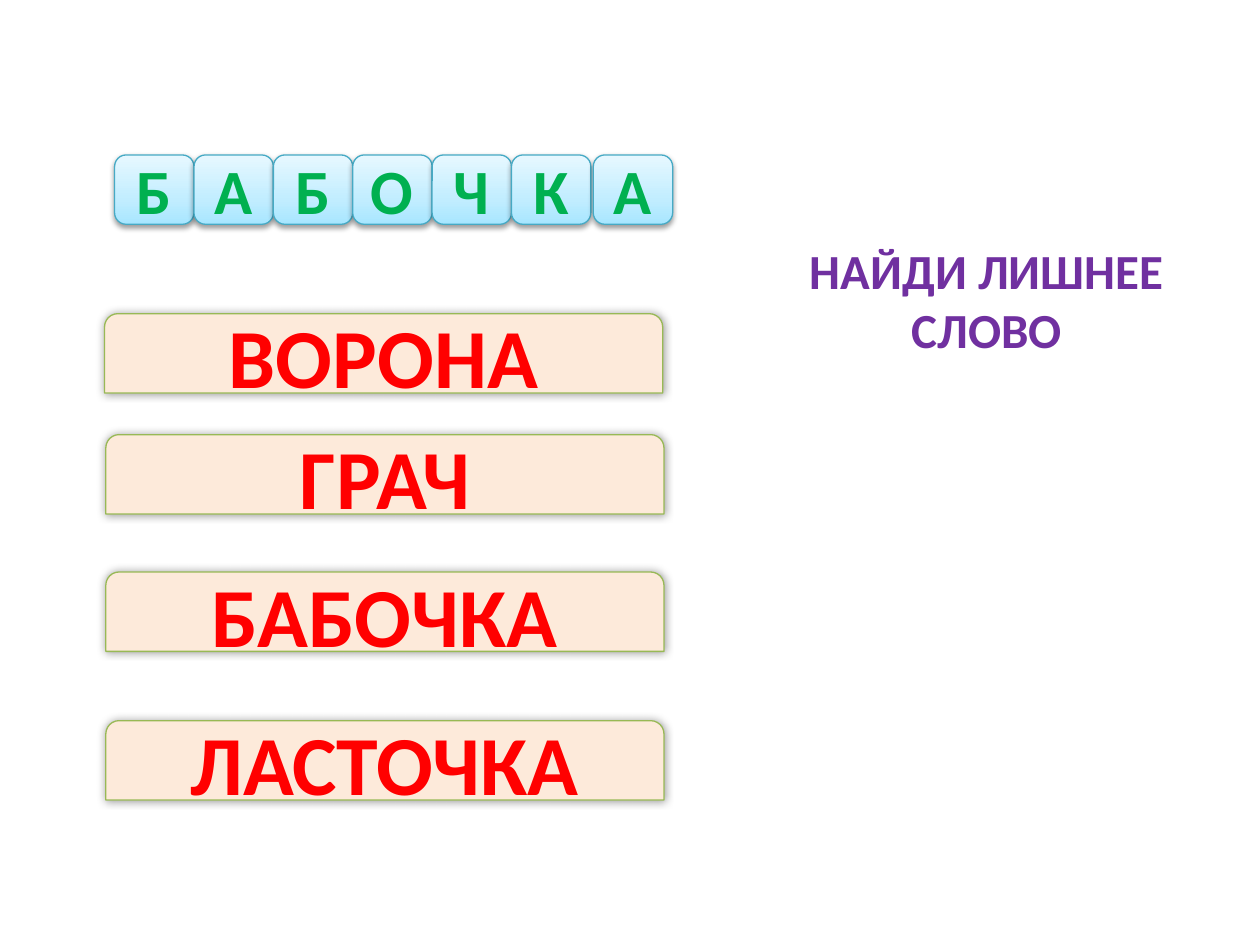
from copy import deepcopy
from dataclasses import dataclass

from lxml.etree import SubElement
from pptx import Presentation
from pptx.dml.color import RGBColor
from pptx.enum.shapes import MSO_SHAPE as Preset
from pptx.enum.text import MSO_ANCHOR as Anchor, MSO_AUTO_SIZE as AutoSize, PP_ALIGN as Align
from pptx.oxml.ns import qn
from pptx.util import Inches, Pt

# The slide is a grid of 100 columns and 75 rows of square cells.
COLUMNS, ROWS = 100, 75
CELL = Inches(0.1)

FONT = "Calibri"
RED = RGBColor(0xFF, 0x00, 0x00)
GREEN = RGBColor(0x00, 0xB0, 0x50)
PURPLE = RGBColor(0x70, 0x30, 0xA0)
PEACH = RGBColor(0xFD, 0xEA, 0xDA)
OLIVE = RGBColor(0x98, 0xB9, 0x55)
TEAL = RGBColor(0x46, 0xAA, 0xC5)
SKY = RGBColor(0xA7, 0xE6, 0xFF)
SKY_MIDDLE = RGBColor(0xC1, 0xED, 0xFF)
SKY_LIGHT = RGBColor(0xE7, 0xF8, 0xFF)


@dataclass(frozen=True)
class Area:
    left: float
    top: float
    width: float
    height: float

    def lengths(self) -> list[int]:
        return [round(cells * CELL) for cells in (self.left, self.top, self.width, self.height)]


@dataclass(frozen=True)
class Shadow:
    opacity: int
    blur: float
    distance: float
    angle: int


@dataclass(frozen=True)
class Letter:
    text: str
    position: float
    width: float

    def tile_area(self) -> Area:
        return Area(9.1 + 6.3 * self.position, 12.3, 6.3, 5.5)

    def text_area(self) -> Area:
        tile = self.tile_area()
        return Area(tile.left + (tile.width - self.width) / 2, 11.5, self.width, 7.1)


@dataclass(frozen=True)
class Plate:
    word: str
    left: float
    top: float


LETTERS = [
    Letter("Б", 0, 4.8),
    Letter("А", 1, 5.1),
    Letter("Б", 2, 4.8),
    Letter("О", 3, 5.4),
    Letter("Ч", 4, 4.9),
    Letter("К", 5, 4.8),
    Letter("А", 6.03, 5.1),
]
PLATES = [
    Plate("ВОРОНА", 8.3, 24.9),
    Plate("ГРАЧ", 8.4, 34.5),
    Plate("БАБОЧКА", 8.4, 45.4),
    Plate("ЛАСТОЧКА", 8.4, 57.2),
]
TILE_SHADOW = Shadow(opacity=38, blur=3.1, distance=1.6, angle=90)
PLATE_SHADOW = Shadow(opacity=40, blur=5, distance=0, angle=0)


def write_text(shape, text: str, *, size: int, color: RGBColor, align=Align.CENTER,
               anchor=Anchor.TOP, wrap: bool = True) -> None:
    frame = shape.text_frame
    frame.word_wrap = wrap
    frame.vertical_anchor = anchor
    paragraph = frame.paragraphs[0]
    paragraph.alignment = align
    run = paragraph.add_run()
    run.text = text
    run.font.name = FONT
    run.font.size = Pt(size)
    run.font.bold = True
    run.font.color.rgb = color


def add_text(shapes, area: Area, text: str, **text_format) -> None:
    box = shapes.add_textbox(*area.lengths())
    write_text(box, text, **text_format)
    box.text_frame.auto_size = AutoSize.SHAPE_TO_FIT_TEXT


def cast_shadow(shape, shadow: Shadow) -> None:
    shape.shadow.inherit = False
    effects = shape._element.spPr.find(qn("a:effectLst"))
    outer = SubElement(effects, qn("a:outerShdw"), blurRad=str(Pt(shadow.blur)),
                       dist=str(Pt(shadow.distance)), dir=str(shadow.angle * 60000),
                       rotWithShape="0")
    color = SubElement(outer, qn("a:srgbClr"), val="000000")
    SubElement(color, qn("a:alpha"), val=str(shadow.opacity * 1000))


def add_panel(shapes, preset: Preset, area: Area, line: RGBColor, shadow: Shadow):
    panel = shapes.add_shape(preset, *area.lengths())
    panel.line.color.rgb = line
    panel.line.width = Pt(0.75)
    cast_shadow(panel, shadow)
    return panel


def fill_with_sky(shape) -> None:
    """Blend three blues upwards, the lightest at the top."""
    fill = shape.fill
    fill.gradient()
    fill.gradient_angle = 90
    first = shape._element.spPr.find(".//" + qn("a:gs"))
    first.addnext(deepcopy(first))
    colors = (SKY, SKY_MIDDLE, SKY_LIGHT)
    for stop, position, color in zip(fill.gradient_stops, (0, 0.35, 1), colors):
        stop.position = position
        stop.color.rgb = color


def add_tile(shapes, letter: Letter) -> None:
    tile = add_panel(shapes, Preset.ROUNDED_RECTANGLE, letter.tile_area(), TEAL, TILE_SHADOW)
    fill_with_sky(tile)


def add_plate(shapes, plate: Plate) -> None:
    area = Area(plate.left, plate.top, 44.3, 6.3)
    panel = add_panel(shapes, Preset.ROUND_2_SAME_RECTANGLE, area, OLIVE, PLATE_SHADOW)
    panel.fill.solid()
    panel.fill.fore_color.rgb = PEACH
    write_text(panel, plate.word, size=48, color=RED, anchor=Anchor.MIDDLE)


def main() -> None:
    presentation = Presentation()
    presentation.slide_width = COLUMNS * CELL
    presentation.slide_height = ROWS * CELL
    slide = presentation.slides.add_slide(presentation.slide_layouts[6])

    tiles = slide.shapes.add_group_shape()
    for letter in LETTERS:
        add_tile(tiles.shapes, letter)
    for plate in PLATES:
        add_plate(slide.shapes, plate)
    answer = slide.shapes.add_group_shape()
    for letter in LETTERS:
        add_text(answer.shapes, letter.text_area(), letter.text, size=36, color=GREEN,
                 align=Align.LEFT, wrap=False)
    add_text(slide.shapes, Area(59.4, 18.6, 37.8, 10.4), "НАЙДИ ЛИШНЕЕ СЛОВО",
             size=28, color=PURPLE)

    presentation.save("out.pptx")


if __name__ == "__main__":
    main()
